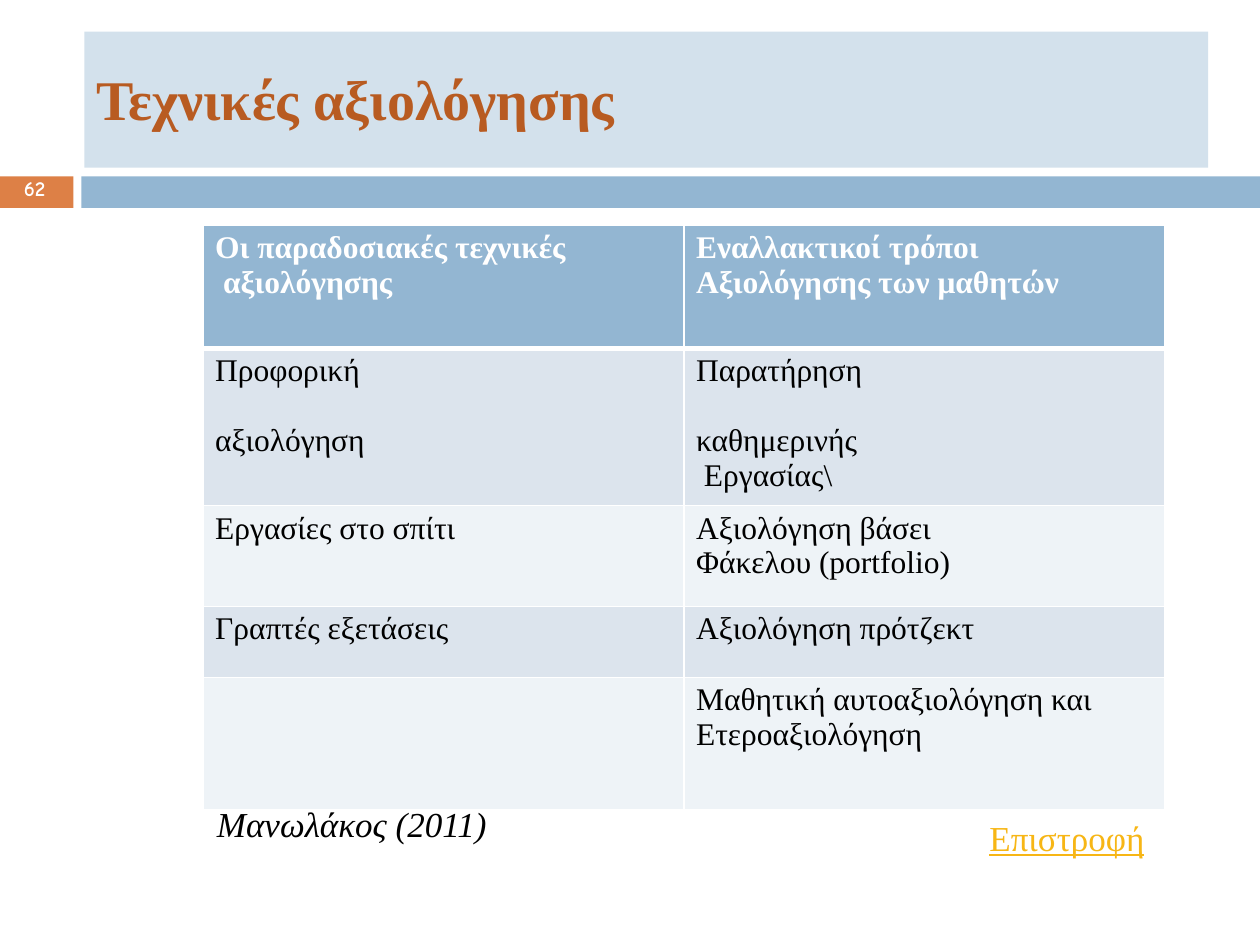
from pptx import Presentation
from pptx.dml.color import RGBColor
from pptx.enum.shapes import MSO_SHAPE
from pptx.oxml.ns import qn
from pptx.util import Pt
from lxml import etree

RECT = MSO_SHAPE.RECTANGLE
WHITE = RGBColor(0xFF, 0xFF, 0xFF)
BLACK = RGBColor(0, 0, 0)
ORANGE = RGBColor(0xDD, 0x80, 0x46)
RUST = RGBColor(0xB8, 0x5B, 0x21)
GOLD = RGBColor(0xF7, 0xB6, 0x15)
BLUE = RGBColor(0x93, 0xB6, 0xD2)
PALE = RGBColor(0xD3, 0xE1, 0xEC)
BAND = RGBColor(0xDC, 0xE4, 0xED)
LIGHT = RGBColor(0xEE, 0xF3, 0xF7)
SERIF = "Times New Roman"


def style(frame, size, color, name=SERIF, bold=False):
    for para in frame.paragraphs:
        for run in para.runs:
            font = run.font
            font.name, font.size, font.bold = name, Pt(size), bold
            font.color.rgb = color


def edge(cell, tag, width):
    line = etree.SubElement(cell._tc.get_or_add_tcPr(), qn(tag), w=str(Pt(width)))
    fill = etree.SubElement(line, qn("a:solidFill"))
    etree.SubElement(fill, qn("a:srgbClr"), val=str(WHITE))


deck = Presentation()
deck.slide_width, deck.slide_height = Pt(720), Pt(540)
slide = deck.slides.add_slide(deck.slide_layouts[6])
shapes = slide.shapes

for left, top, width, height, color in [
    (0, 100.8, 42, 18, ORANGE),
    (46.5, 100.8, 673.5, 18, BLUE),
    (48.2, 18, 642.2, 77.8, PALE),
]:
    bar = shapes.add_shape(RECT, Pt(left), Pt(top), Pt(width), Pt(height))
    bar.shadow.inherit = False
    bar.fill.solid()
    bar.fill.fore_color.rgb = color
    bar.line.fill.background()

for text, left, top, width, height, size, color, name, bold, slant, under in [
    ("Τεχνικές αξιολόγησης", 55.2, 36.7, 634, 58, 32, RUST, SERIF, True, False, False),
    ("62", 13.7, 100.1, 16.6, 16.6, 12, WHITE, "Comic Neue", True, False, False),
    ("Επιστροφή", 565.4, 466.6, 92, 26, 20, GOLD, SERIF, False, False, True),
    ("Μανωλάκος (2011)", 124, 458.6, 158, 26, 20, BLACK, SERIF, False, True, False),
]:
    box = shapes.add_textbox(Pt(left), Pt(top), Pt(width), Pt(height))
    frame = box.text_frame
    frame.word_wrap = True
    frame.margin_left = frame.margin_right = 0
    frame.margin_top = frame.margin_bottom = 0
    frame.text = text
    style(frame, size, color, name, bold)
    font = frame.paragraphs[0].runs[0].font
    font.italic, font.underline = slant, under

rows = [
    (70.5, BLUE, "Οι παραδοσιακές τεχνικές\v αξιολόγησης",
     "Εναλλακτικοί τρόποι\vΑξιολόγησης των μαθητών"),
    (90, BAND, "Προφορική\nαξιολόγηση", "Παρατήρηση\nκαθημερινής\v Εργασίας\\"),
    (57.6, LIGHT, "Εργασίες στο σπίτι", "Αξιολόγηση βάσει\vΦάκελου (portfolio)"),
    (40.5, BAND, "Γραπτές εξετάσεις", "Αξιολόγηση πρότζεκτ"),
    (75.6, LIGHT, "", "Μαθητική αυτοαξιολόγηση και\vΕτεροαξιολόγηση"),
]
high = sum(row[0] for row in rows)
table = shapes.add_table(len(rows), 2, Pt(116), Pt(128.5), Pt(549.6), Pt(high)).table
for col in table.columns:
    col.width = Pt(274.8)

for i, (height, color, *texts) in enumerate(rows):
    table.rows[i].height = Pt(height)
    for j, text in enumerate(texts):
        cell = table.cell(i, j)
        cell.margin_left, cell.margin_right = Pt(7), 0
        cell.margin_top, cell.margin_bottom = Pt(3), 0
        frame = cell.text_frame
        frame.text = text
        style(frame, 18, BLACK if i else WHITE, bold=i == 0)
        for para in frame.paragraphs[1:]:
            para.space_before = Pt(20)
        for tag, width in [
            ("a:lnL", 1),
            ("a:lnR", 1),
            ("a:lnT", 3 if i == 1 else 1),
            ("a:lnB", 3 if i == 0 else 1),
        ]:
            edge(cell, tag, width)
        cell.fill.solid()
        cell.fill.fore_color.rgb = color

deck.save("out.pptx")
